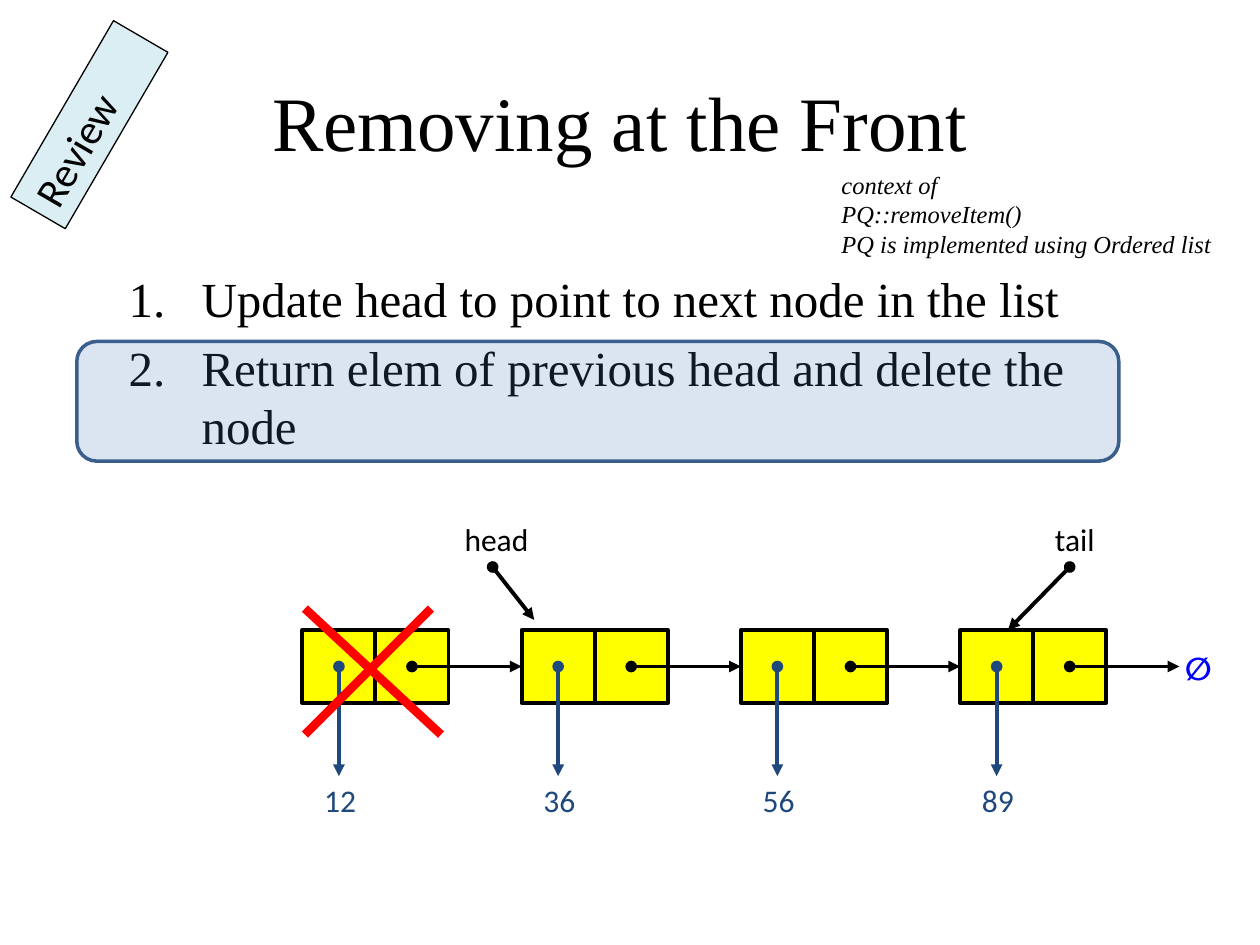
"""Build the slide on removing the front node of a linked list."""
from lxml.etree import SubElement
from pptx import Presentation
from pptx.dml.color import RGBColor
from pptx.enum.shapes import MSO_CONNECTOR as Connector, MSO_SHAPE as Shape
from pptx.enum.text import MSO_ANCHOR as Anchor, MSO_AUTO_SIZE as AutoSize, PP_ALIGN as Align
from pptx.oxml.ns import qn
from pptx.util import Inches, Pt

COLORS = {
    "ink": "000000", "data": "1F497D", "node": "FFFF00", "null": "0000FF",
    "cross": "FF0000", "badge": "DBEEF4", "highlight": "4F81BD", "frame": "3A5F8C",
}
SERIF, SANS = "Times New Roman", "Calibri"
VALUES = ["12", "36", "56", "89"]
CELL, PITCH = 0.58, 1.74
NODE_LEFT, NODE_TOP = 2.4, 5
MIDDLE = NODE_TOP + CELL / 2


def color(key):
    return RGBColor.from_string(COLORS[key])


def apply(target, values):
    for name, value in values.items():
        setattr(target, name, value)


def place(shape, left, top, width, height):
    apply(shape, {"left": Inches(left), "top": Inches(top),
                  "width": Inches(width), "height": Inches(height)})


def write(shape, text, size, font=SERIF, ink="ink", align=Align.LEFT, frame=None, **style):
    body = shape.text_frame
    body.text = text
    apply(body, {"word_wrap": True, "auto_size": AutoSize.NONE,
                 "vertical_anchor": Anchor.TOP, **(frame or {})})
    for paragraph in body.paragraphs:
        paragraph.alignment = align
        for run in paragraph.runs:
            apply(run.font, {"name": font, "size": Pt(size), **style})
            run.font.color.rgb = color(ink)


def number_items(body):
    for paragraph in body.text_frame.paragraphs:
        properties = paragraph._p.get_or_add_pPr()
        properties.set("marL", str(Inches(0.58)))
        properties.set("indent", str(-Inches(0.58)))
        SubElement(properties, qn("a:buFont"), typeface=SERIF)
        SubElement(properties, qn("a:buAutoNum"), type="arabicPeriod")


def add_box(slide, kind, bounds, fill, edge="ink", weight=2.25):
    box = slide.shapes.add_shape(kind, *map(Inches, bounds))
    box.shadow.inherit = False
    box.fill.solid()
    box.fill.fore_color.rgb = color(fill)
    box.line.color.rgb = color(edge)
    box.line.width = Pt(weight)
    return box


def add_line(slide, start, end, ink="ink", weight=2.25, pointer=True):
    line = slide.shapes.add_connector(Connector.STRAIGHT, *map(Inches, (*start, *end)))
    line.line.color.rgb = color(ink)
    line.line.width = Pt(weight)
    if pointer:
        stroke = line.line._get_or_add_ln()
        SubElement(stroke, qn("a:headEnd"), type="oval")
        SubElement(stroke, qn("a:tailEnd"), type="triangle")
    SubElement(line._element.spPr, qn("a:effectLst"))
    return line


def add_label(slide, text, bounds, ink="ink", **style):
    label = slide.shapes.add_textbox(*map(Inches, bounds))
    write(label, text, 18, SANS, ink, Align.CENTER, {"word_wrap": False}, **style)


def add_list(slide):
    lefts = [NODE_LEFT + index * PITCH for index in range(len(VALUES))]
    data_cells = []
    for left in lefts:
        data_cell, _ = [
            add_box(slide, Shape.RECTANGLE, (x, NODE_TOP, CELL, CELL), "node")
            for x in (left, left + CELL)
        ]
        data_cells.append(data_cell)
    for left, value, following in zip(lefts, VALUES, data_cells[1:] + [None]):
        data_x, next_x = left + CELL / 2, left + 1.5 * CELL
        add_line(slide, (data_x, MIDDLE), (data_x, MIDDLE + 1.5 * CELL), "data")
        link = add_line(slide, (next_x, MIDDLE), (left + PITCH, MIDDLE))
        if following:
            link.end_connect(following, 1)
        add_label(slide, value, (data_x - 0.22, 6.15, 0.46, 0.4), "data")
    add_label(slide, "∅", (9.32, 5.1, 0.38, 0.36), "null", bold=True)


def add_end_pointers(slide):
    for name, left, start, end in [
        ("head", 3.58, (3.91, 4.5), (4.24, 4.92)),
        ("tail", 8.17, (8.49, 4.5), (8, 5)),
    ]:
        add_line(slide, start, end)
        add_label(slide, name, (left, 4.08, 0.72, 0.4))


def add_cross(slide):
    for start, end in [((2.42, 4.83), (3.5, 5.83)), ((3.42, 4.83), (2.42, 5.83))]:
        add_line(slide, start, end, "cross", 5, pointer=False)


def add_badge(slide):
    badge = add_box(slide, Shape.RECTANGLE, (-0.1, 0.74, 1.62, 0.5), "badge", weight=0.75)
    badge.rotation = 300.2
    write(badge, "Review", 24, SANS)


def add_highlight(slide):
    highlight = add_box(slide, Shape.ROUNDED_RECTANGLE, (0.61, 2.71, 8.27, 0.95),
                        "highlight", "frame", 2)
    tint = highlight.fill._xPr.find(qn("a:solidFill"))[0]
    SubElement(tint, qn("a:alpha"), val="20000")


def add_context(slide):
    context = slide.shapes.add_textbox(*map(Inches, (6.58, 1.3, 3.3, 0.81)))
    write(context, "context of\vPQ::removeItem()\nPQ is implemented using Ordered list",
          14, italic=True)


def main():
    deck = Presentation()
    apply(deck, {"slide_width": Inches(10), "slide_height": Inches(7.5)})
    slide = deck.slides.add_slide(deck.slide_layouts[1])
    title, steps = slide.placeholders
    place(title, 0.67, 0.33, 8.5, 1.25)
    write(title, "Removing at the Front", 44, align=Align.CENTER,
          frame={"vertical_anchor": Anchor.MIDDLE})
    place(steps, 0.92, 2.08, 8.33, 4.5)
    write(steps, "Update head to point to next node in the list\n"
                 "Return elem of previous head and delete the node", 28)
    number_items(steps)
    add_list(slide)
    add_end_pointers(slide)
    add_cross(slide)
    add_badge(slide)
    add_highlight(slide)
    add_context(slide)
    deck.save("out.pptx")


if __name__ == "__main__":
    main()
